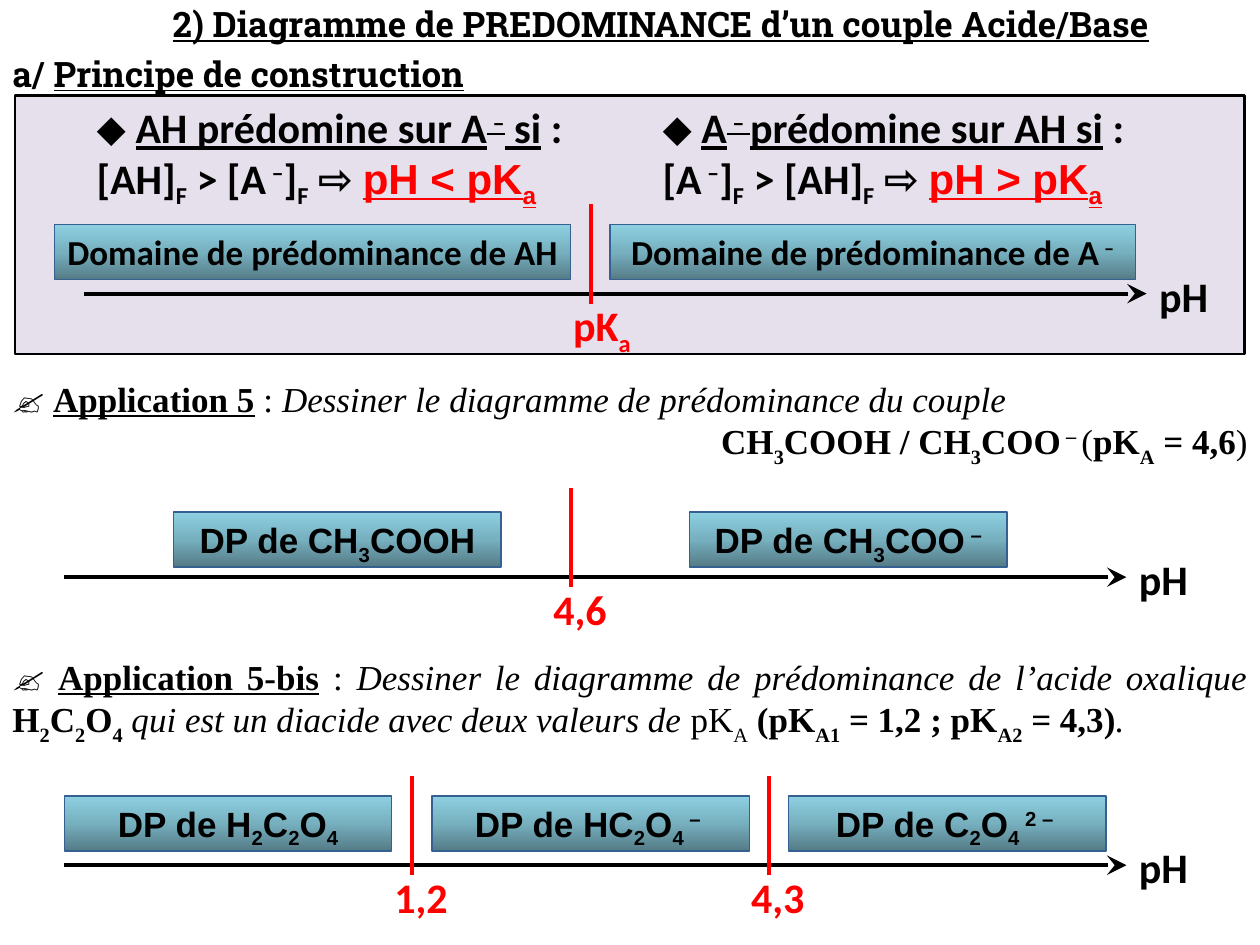
from copy import deepcopy
from dataclasses import dataclass

from lxml.etree import SubElement
from pptx import Presentation
from pptx.dml.color import RGBColor
from pptx.enum.shapes import MSO_CONNECTOR, MSO_SHAPE
from pptx.enum.text import MSO_ANCHOR, MSO_AUTO_SIZE, PP_ALIGN
from pptx.oxml.ns import qn
from pptx.util import Pt


@dataclass(frozen=True)
class Theme:
    black: RGBColor = RGBColor(0, 0, 0)
    red: RGBColor = RGBColor(0xFF, 0, 0)
    panel: RGBColor = RGBColor(0xE6, 0xE0, 0xEC)
    edge: RGBColor = RGBColor(0x37, 0x60, 0x92)
    shades: tuple = ("547B86", "77B0BF", "8DD0E2")
    head: str = "Roboto Slab"
    sans: str = "Arial"
    label: str = "Calibri"
    serif: str = "Times New Roman"
    small: int = 20
    large: int = 24


THEME = Theme()


def add_span(par, text, flags, drop):
    for i, part in enumerate(text.split("_")):
        for j, bit in enumerate(part.split("^")):
            if not bit:
                continue
            run = par.add_run()
            run.text = bit
            font = run.font
            if "b" in flags:
                font.bold = True
            if "i" in flags:
                font.italic = True
            if "u" in flags:
                font.underline = True
            if "r" in flags:
                font.color.rgb = THEME.red
                font.name = THEME.sans
            base = drop if i % 2 else 30 if j % 2 else 0
            if base:
                run._r.get_or_add_rPr().set("baseline", str(base * 1000))


def fill_text(shape, pars, face, size, color=THEME.black, bold=None,
              aligns=(PP_ALIGN.LEFT,), wrap=True, anchor=MSO_ANCHOR.TOP, drop=-25):
    frame = shape.text_frame
    frame.word_wrap = wrap
    frame.auto_size = MSO_AUTO_SIZE.SHAPE_TO_FIT_TEXT
    frame.vertical_anchor = anchor
    for i, spans in enumerate(pars):
        par = frame.paragraphs[0] if i == 0 else frame.add_paragraph()
        par.alignment = aligns[i % len(aligns)]
        font = par.font
        font.name, font.size, font.bold = face, Pt(size), bold
        font.color.rgb = color
        for text, flags in spans:
            add_span(par, text, flags, drop)


def add_text(slide, x, y, w, h, pars, face, size, **style):
    box = slide.shapes.add_textbox(Pt(x), Pt(y), Pt(w), Pt(h))
    fill_text(box, pars, face, size, **style)


def add_title(slide, text):
    title = slide.shapes.title
    title.left, title.top = Pt(91.4), Pt(-2)
    title.width, title.height = Pt(630), Pt(31.5)
    fill_text(title, [[(text, "u")]], THEME.head, THEME.small, bold=True, wrap=False)


def add_rect(slide, x, y, w, h, edge, width):
    rect = slide.shapes.add_shape(MSO_SHAPE.RECTANGLE, Pt(x), Pt(y), Pt(w), Pt(h))
    rect.shadow.inherit = False
    rect.line.color.rgb = edge
    rect.line.width = Pt(width)
    return rect


def add_panel(slide):
    panel = add_rect(slide, 8.6, 54.7, 702.7, 147.6, THEME.black, 1.5)
    panel.fill.solid()
    panel.fill.fore_color.rgb = THEME.panel


def add_zone(slide, x, y, w, text, face):
    zone = add_rect(slide, x, y, w, 31.5, THEME.edge, 0.75)
    fill = zone.fill
    fill.gradient()
    fill.gradient_angle = 90
    stops = zone._element.spPr.find(qn("a:gradFill")).find(qn("a:gsLst"))
    stops.append(deepcopy(stops[0]))
    for i, (stop, shade) in enumerate(zip(fill.gradient_stops, THEME.shades)):
        stop.position = i / 2
        stop.color.rgb = RGBColor.from_string(shade)
    fill_text(zone, [[(text, "")]], face, THEME.small, bold=True,
              aligns=(PP_ALIGN.CENTER,))


def add_line(slide, x1, y1, x2, y2, color, arrow=False):
    line = slide.shapes.add_connector(
        MSO_CONNECTOR.STRAIGHT, Pt(x1), Pt(y1), Pt(x2), Pt(y2))
    line.line.color.rgb = color
    line.line.width = Pt(2.25)
    if arrow:
        SubElement(line.line._get_or_add_ln(), qn("a:headEnd"),
                   type="stealth", w="lg", len="lg")
    SubElement(line._element.spPr, qn("a:effectLst"))


def add_scale(slide, x, y, top, face, marks, zones):
    tip = x + 607
    add_line(slide, tip, y, x, y, THEME.black, arrow=True)
    add_text(slide, tip, y - 16.8, 42.5, 36, [[("pH", "")]], THEME.label,
             THEME.large, bold=True, wrap=False)
    for spot, width, text in marks:
        add_line(slide, spot, y + 5.8, spot, y - 51, THEME.red)
        add_text(slide, spot - 17.1, y, width, 36, [[(text, "")]], THEME.label,
                 THEME.large, color=THEME.red, bold=True, wrap=False)
    for left, width, text in zones:
        add_zone(slide, left, top, width, text, face)


def add_rule(slide, x, w, claim, test, result):
    pars = [[("⬥ ", ""), (claim, "bu"), (" :", "b")],
            [(test + " ⇨ ", "b"), (result, "bur")]]
    add_text(slide, x, 54.7, w, 65.5, pars, THEME.label, THEME.large)


def add_task(slide, y, pars):
    add_text(slide, 0, y, 720, 55.4, pars, THEME.serif, THEME.small,
             aligns=(PP_ALIGN.JUSTIFY, PP_ALIGN.RIGHT),
             anchor=MSO_ANCHOR.MIDDLE, drop=-30)


def main():
    deck = Presentation()
    deck.slide_width, deck.slide_height = Pt(720), Pt(540)
    slide = deck.slides.add_slide(deck.slide_layouts[5])

    add_title(slide, "2) Diagramme de PREDOMINANCE d’un couple Acide/Base")
    add_panel(slide)
    add_text(slide, 0, 26.2, 306, 31.5,
             [[("a/ ", ""), ("Principe de construction", "u")]],
             THEME.head, THEME.small, bold=True, wrap=False)

    add_rule(slide, 48.2, 283.7, "AH prédomine sur A^ –^ si",
             "[AH]_F_ > [A^ –^]_F_", "pH < pK_a_")
    add_rule(slide, 371.5, 294.5, "A^ – ^prédomine sur AH si",
             "[A^ –^]_F_ > [AH]_F_", "pH > pK_a_")
    add_scale(slide, 48.2, 167.8, 128.2, THEME.label, [(337.5, 54, "pK_a_")],
              [(31, 295.2, "Domaine de prédominance de AH"),
               (348.6, 300.2, "Domaine de prédominance de A^ –^")])

    add_task(slide, 214.1, [
        [("✍ ", "b"), ("Application 5", "bu"), (" : ", ""),
         ("Dessiner le diagramme de prédominance du couple", "i")],
        [("CH_3_COOH / CH_3_COO^ – ^", "b"), ("(", ""),
         ("pK_A_ = 4,6", "b"), (")", "")]])
    add_scale(slide, 36.7, 329.8, 292.6, THEME.sans, [(326.2, 45.4, "4,6")],
              [(99.2, 187.2, "DP de CH_3_COOH"),
               (394, 181.4, "DP de CH_3_COO^ –^")])

    add_task(slide, 373, [
        [("✍ ", "b"), ("Application 5-bis", "bu"), (" : ", ""),
         ("Dessiner le diagramme de prédominance de l’acide oxalique ", "i"),
         ("H_2_C_2_O_4_", "b"),
         (" qui est un diacide avec deux valeurs de ", "i"), ("pK_A_ ", ""),
         ("(pK_A1_ = 1,2 ; pK_A2_ = 4,3)", "b"), (".", "i")]])
    add_scale(slide, 36.7, 494.4, 454.8, THEME.sans,
              [(235.4, 45.4, "1,2"), (439.2, 45.4, "4,3")],
              [(36.7, 187.2, "DP de H_2_C_2_O_4_"),
               (246.8, 181.4, "DP de HC_2_O_4_^ – ^"),
               (450.7, 181.4, "DP de C_2_O_4_^ 2 – ^")])
    deck.save("out.pptx")


if __name__ == "__main__":
    main()
